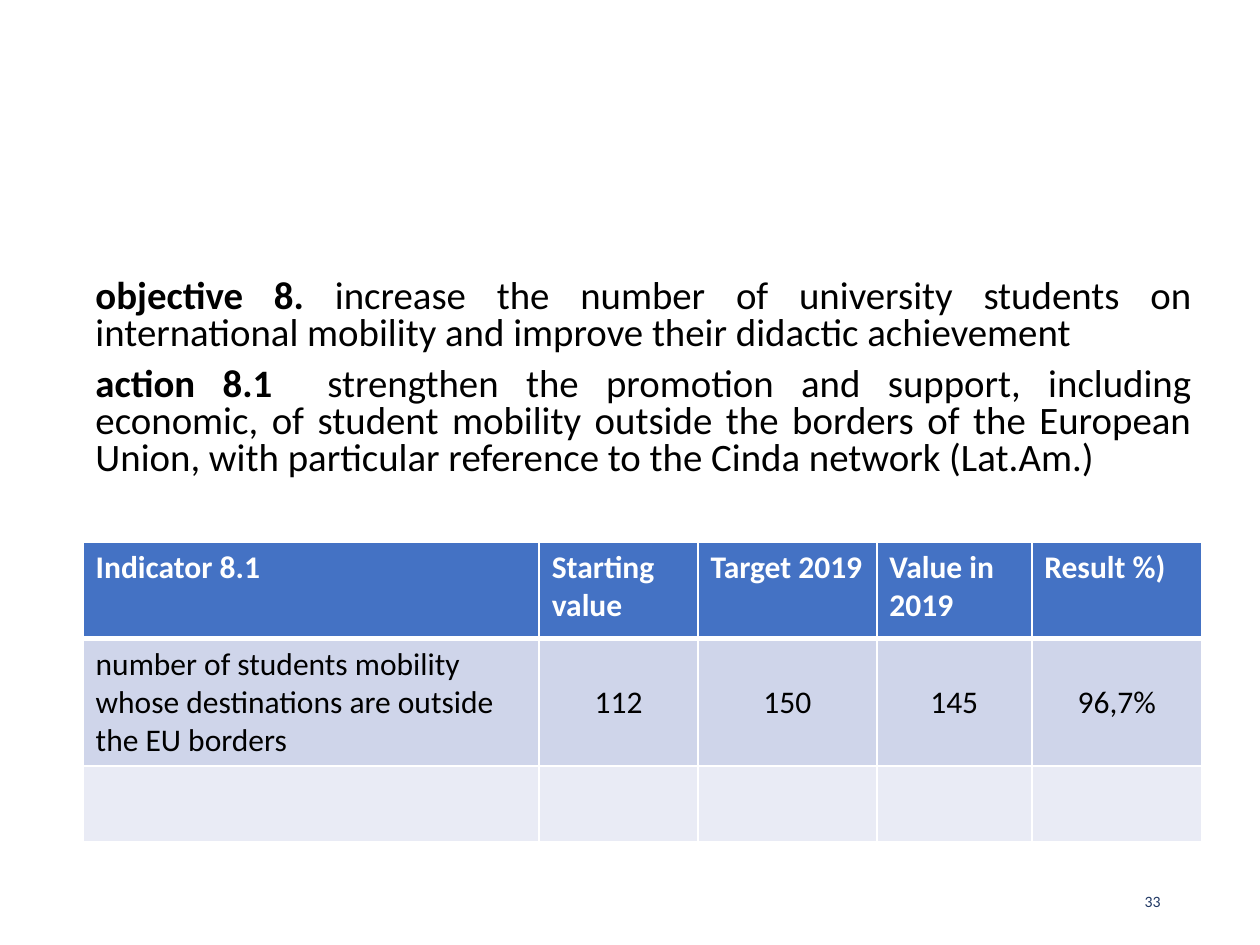
from dataclasses import dataclass

import pptx
import pptx.dml.color
import pptx.enum.text
import pptx.oxml
import pptx.oxml.ns
import pptx.util
from pptx.dml.color import RGBColor
from pptx.util import Inches

ALIGN = pptx.enum.text.PP_ALIGN
ANCHOR = pptx.enum.text.MSO_ANCHOR
FONT = "Calibri"
BLACK = RGBColor(0x00, 0x00, 0x00)
WHITE = RGBColor(0xFF, 0xFF, 0xFF)
NAVY = RGBColor(0x20, 0x38, 0x64)
BLUE = RGBColor(0x44, 0x72, 0xC4)
BAND_DARK = RGBColor(0xCF, 0xD5, 0xEA)
BAND_LIGHT = RGBColor(0xE9, 0xEB, 0xF5)


@dataclass
class Row:
    height: float
    fill: RGBColor
    texts: tuple[str, ...]
    header: bool = False


COLUMN_WIDTHS = (3.62, 1.26, 1.42, 1.23, 1.35)
ROWS = (
    Row(0.77, BLUE, ("Indicator 8.1", "Starting value", "Target 2019",
                     "Value in 2019", "Result %)"), header=True),
    Row(1.01, BAND_DARK, ("number of students mobility whose destinations are "
                          "outside the EU borders", "112", "150", "145", "96,7%")),
    Row(0.6, BAND_LIGHT, ("",) * len(COLUMN_WIDTHS)),
)
STATEMENTS = (
    ("objective 8.", " increase the number of university students on international "
     "mobility and improve their didactic achievement "),
    ("action 8.1  ", "strengthen the promotion and support, including economic, of "
     "student mobility outside the borders of the European Union, with particular "
     "reference to the Cinda network (Lat.Am.)"),
)


def add_text(p, text: str, *, size: float, color: RGBColor = BLACK,
             bold: bool = False, align=ALIGN.LEFT) -> None:
    p.alignment = align
    r = p.add_run()
    r.text = text
    r.font.name = FONT
    r.font.size = pptx.util.Pt(size)
    r.font.bold = bold
    r.font.color.rgb = color


def add_box(s, left: float, top: float, width: float, height: float, anchor):
    sp = s.shapes.add_textbox(*map(Inches, (left, top, width, height)))
    tf = sp.text_frame
    tf.word_wrap = True
    tf.vertical_anchor = anchor
    return tf


def set_borders(cell, bottom: float) -> None:
    """Draw white cell edges, 1 pt except for the bottom one."""
    tc_pr = cell._tc.get_or_add_tcPr()
    edges = (("lnL", 1), ("lnR", 1), ("lnT", 1), ("lnB", bottom))
    for i, (tag, width) in enumerate(edges):
        tc_pr.insert(i, pptx.oxml.parse_xml(
            f'<a:{tag} {pptx.oxml.ns.nsdecls("a")} w="{pptx.util.Pt(width)}">'
            f'<a:solidFill><a:srgbClr val="{WHITE}"/></a:solidFill></a:{tag}>'))


def add_statements(s) -> None:
    tf = add_box(s, 0.66, 2.17, 8.9, 1.81, ANCHOR.TOP)
    for i, (label, statement) in enumerate(STATEMENTS):
        p = tf.add_paragraph() if i else tf.paragraphs[0]
        p.line_spacing = 0.8
        if i:
            p.space_before = pptx.util.Pt(7.5)
        add_text(p, label, size=22.2, bold=True, align=ALIGN.JUSTIFY)
        add_text(p, statement, size=22.2, align=ALIGN.JUSTIFY)


def add_indicator_table(s) -> None:
    height = sum(row.height for row in ROWS)
    table = s.shapes.add_table(
        len(ROWS), len(COLUMN_WIDTHS), Inches(0.66), Inches(4.3),
        Inches(sum(COLUMN_WIDTHS)), Inches(height)).table
    for column, width in zip(table.columns, COLUMN_WIDTHS):
        column.width = Inches(width)
    for i, row in enumerate(ROWS):
        table.rows[i].height = Inches(row.height)
        for j, text in enumerate(row.texts):
            cell = table.cell(i, j)
            cell.fill.solid()
            cell.fill.fore_color.rgb = row.fill
            cell.vertical_anchor = ANCHOR.TOP if row.header else ANCHOR.MIDDLE
            set_borders(cell, bottom=3 if row.header else 1)
            if text:
                add_text(cell.text_frame.paragraphs[0], text, size=18,
                         color=WHITE if row.header else BLACK, bold=row.header,
                         align=ALIGN.LEFT if row.header or j == 0 else ALIGN.CENTER)


def main() -> None:
    prs = pptx.Presentation()
    prs.slide_width, prs.slide_height = Inches(10), Inches(7.5)
    s = prs.slides.add_slide(prs.slide_layouts[6])
    page_number = add_box(s, 7.06, 6.95, 2.25, 0.4, ANCHOR.MIDDLE)
    add_text(page_number.paragraphs[0], "33", size=9, color=NAVY, align=ALIGN.RIGHT)
    add_statements(s)
    add_indicator_table(s)
    prs.save("out.pptx")


if __name__ == "__main__":
    main()
